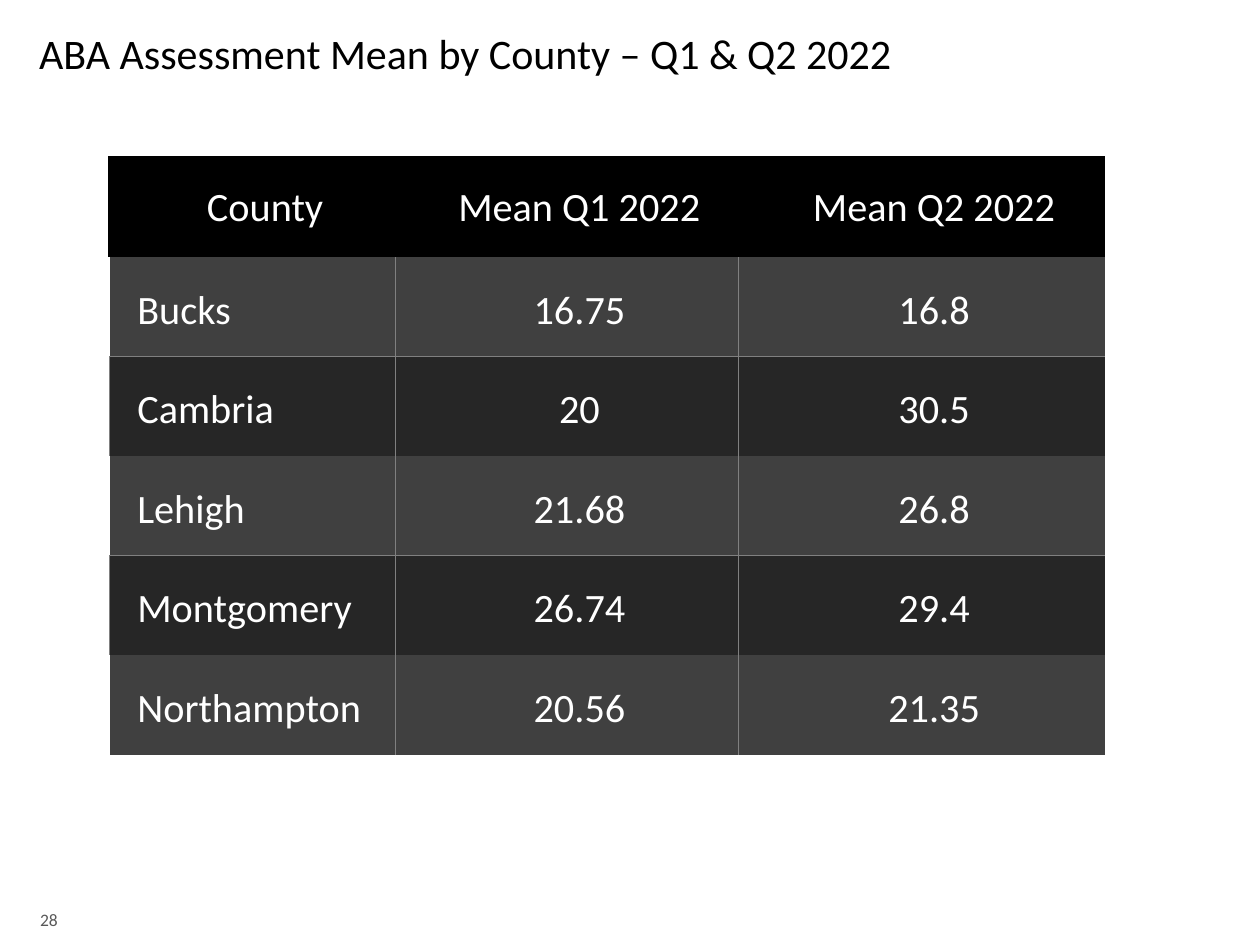
from dataclasses import dataclass

from lxml import etree
from pptx import Presentation
from pptx.dml import color
from pptx.enum import text
from pptx.oxml import ns
from pptx.util import Inches, Pt

FONT = "Calibri"
WHITE, BLACK, GRAY = "FFFFFF", "000000", "808080"
LIGHT_ROW, DARK_ROW = "404040", "262626"
COLUMN_WIDTHS = (2.27, 2.72, 2.91)
ROW_HEIGHT = 0.79


@dataclass
class CountyMean:
    county: str
    q1: str
    q2: str


@dataclass
class Border:
    hex_color: str
    points: float


HEADINGS = CountyMean("County", "Mean Q1 2022", "Mean Q2 2022")
COUNTIES = (
    CountyMean("Bucks", "16.75", "16.8"),
    CountyMean("Cambria", "20", "30.5"),
    CountyMean("Lehigh", "21.68", "26.8"),
    CountyMean("Montgomery", "26.74", "29.4"),
    CountyMean("Northampton", "20.56", "21.35"),
)
HEADER_RULE = Border(BLACK, 1.5)
BODY_RULE = Border(GRAY, 0.5)


def rgb(hex_color: str) -> color.RGBColor:
    return color.RGBColor.from_string(hex_color)


def add_run(paragraph, wording: str, size: float, hex_color: str) -> None:
    run = paragraph.add_run()
    run.text = wording
    run.font.name = FONT
    run.font.size = Pt(size)
    run.font.color.rgb = rgb(hex_color)


def cell_borders(row: int, column: int) -> dict[str, Border]:
    if row == 0:
        return {side: HEADER_RULE for side in ("LT" if column == 0 else "T")}
    dark = row % 2 == 0
    drawn = {
        "L": column > 0 or dark,
        "R": column < len(COLUMN_WIDTHS) - 1,
        "T": dark,
        "B": not dark and row < len(COUNTIES),
    }
    return {side: BODY_RULE for side, shown in drawn.items() if shown}


def draw_borders(cell, borders: dict[str, Border]) -> None:
    properties = cell._tc.get_or_add_tcPr()
    for side in "LRTB":
        line = etree.SubElement(properties, ns.qn(f"a:ln{side}"))
        border = borders.get(side)
        if border is None:
            etree.SubElement(line, ns.qn("a:noFill"))
            continue
        line.set("w", str(Pt(border.points)))
        fill = etree.SubElement(line, ns.qn("a:solidFill"))
        etree.SubElement(fill, ns.qn("a:srgbClr"), val=border.hex_color)


def draw_cell(cell, wording: str, row: int, column: int) -> None:
    header = row == 0
    draw_borders(cell, cell_borders(row, column))
    cell.fill.solid()
    cell.fill.fore_color.rgb = rgb(
        BLACK if header else LIGHT_ROW if row % 2 else DARK_ROW)
    cell.margin_left, cell.margin_right = Inches(0.22), Inches(0.02)
    cell.margin_top = cell.margin_bottom = Inches(0.17)
    cell.vertical_anchor = (
        text.MSO_ANCHOR.MIDDLE if header else text.MSO_ANCHOR.BOTTOM)
    paragraph = cell.text_frame.paragraphs[0]
    centered = header or column > 0
    paragraph.alignment = text.PP_ALIGN.CENTER if centered else text.PP_ALIGN.LEFT
    add_run(paragraph, wording, 23, WHITE)
    paragraph.runs[0].font.bold = False


def draw_title(slide, wording: str) -> None:
    title = slide.shapes.title
    title.left, title.top = Inches(0.21), Inches(0.21)
    title.width, title.height = Inches(8.27), Inches(1.24)
    frame = title.text_frame
    frame.auto_size = text.MSO_AUTO_SIZE.NONE
    frame.vertical_anchor = text.MSO_ANCHOR.TOP
    paragraph = frame.paragraphs[0]
    paragraph.alignment = text.PP_ALIGN.LEFT
    paragraph.line_spacing = 0.9
    add_run(paragraph, wording, 24, BLACK)


def draw_page_number(slide, number: str) -> None:
    page_number = slide.shapes.add_textbox(
        Inches(0.22), Inches(7.03), Inches(0.44), Inches(0.4))
    frame = page_number.text_frame
    frame.word_wrap = True
    frame.vertical_anchor = text.MSO_ANCHOR.BOTTOM
    paragraph = frame.paragraphs[0]
    paragraph.space_after = Pt(6)
    add_run(paragraph, number, 10, "595959")


def draw_means(slide) -> None:
    records = (HEADINGS, *COUNTIES)
    means = slide.shapes.add_table(
        len(records), len(COLUMN_WIDTHS), Inches(0.87), Inches(1.25),
        Inches(sum(COLUMN_WIDTHS)), Inches(ROW_HEIGHT * len(records))).table
    for column, width in zip(means.columns, COLUMN_WIDTHS):
        column.width = Inches(width)
    for row, record in enumerate(records):
        means.rows[row].height = Inches(ROW_HEIGHT)
        for column, wording in enumerate((record.county, record.q1, record.q2)):
            draw_cell(means.cell(row, column), wording, row, column)


def main() -> None:
    presentation = Presentation()
    presentation.slide_width = Inches(10)
    presentation.slide_height = Inches(7.5)
    slide = presentation.slides.add_slide(presentation.slide_layouts[5])
    draw_title(slide, "ABA Assessment Mean by County – Q1 & Q2 2022")
    draw_page_number(slide, "28")
    draw_means(slide)
    presentation.save("out.pptx")


if __name__ == "__main__":
    main()
